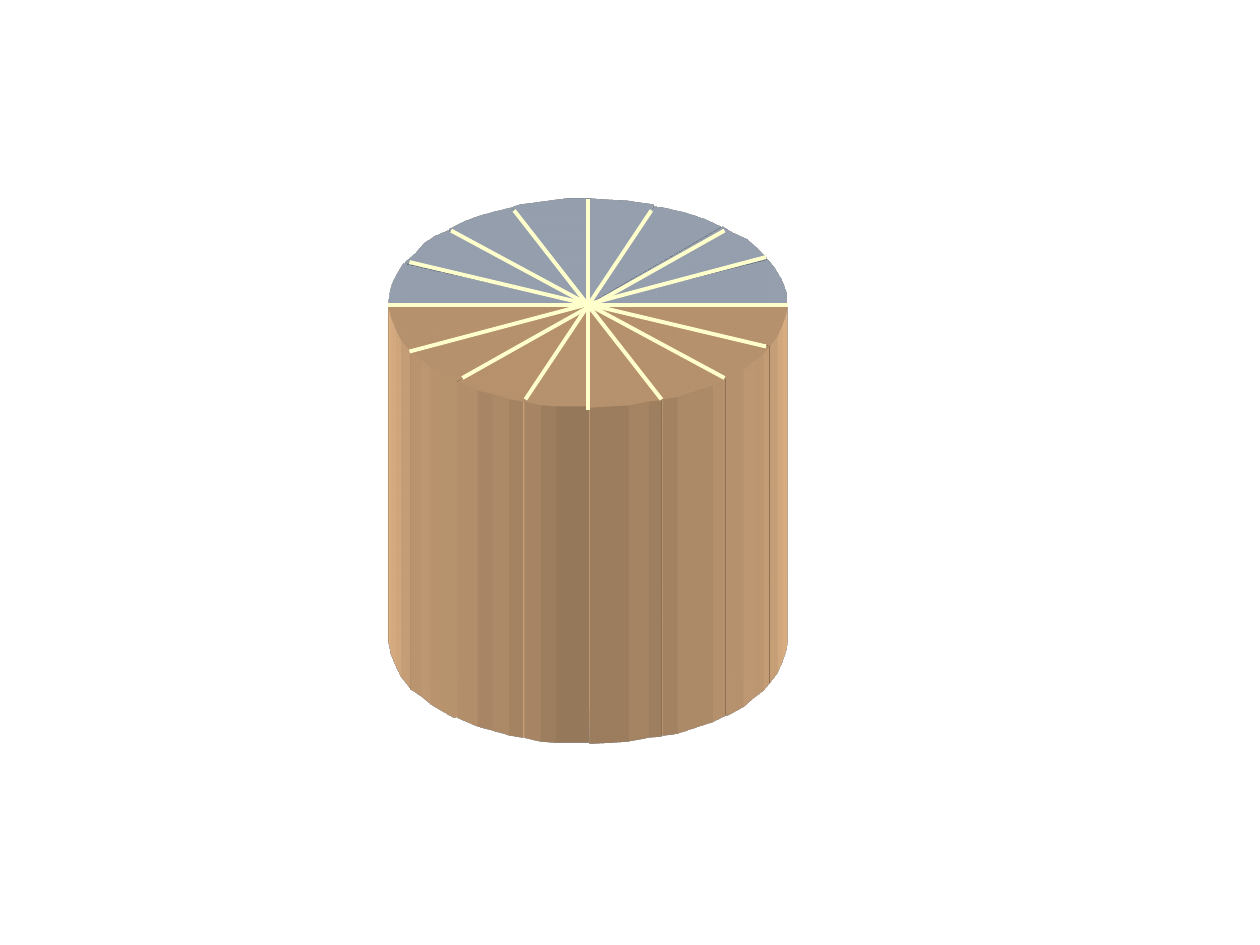
from pptx import Presentation
from pptx.dml.color import RGBColor
from pptx.enum.shapes import MSO_CONNECTOR as Connector
from pptx.oxml import parse_xml
from pptx.oxml.ns import nsdecls
from pptx.util import Inches, Pt
from lxml import etree

COLOURS = {"back": "CFDEF3", "front": "FFCC99", "cut": "FFFFCC"}
CENTRE = (4.67, 2.42)
DEPTH = Inches(5.33)  # the oblique camera shows half of it

# Half of the top and rim points of each slice, from back to front.
SLICES = [
    ("back", [(5.19, 1.63), (4.98, 1.6), (4.83, 1.59), (4.67, 1.58)]),
    ("back", [(4.67, 1.58), (4.5, 1.58), (4.35, 1.6), (4.2, 1.62), (4.13, 1.63), (4.07, 1.65)]),
    ("back", [(4.06, 1.65), (3.94, 1.68), (3.8, 1.72), (3.69, 1.76), (3.57, 1.82)]),
    ("back", [(3.22, 2.08), (3.3, 2.01), (3.37, 1.93), (3.46, 1.87), (3.56, 1.83)]),
    ("back", [(3.2, 2.09), (3.15, 2.17), (3.11, 2.25), (3.09, 2.33), (3.08, 2.42)]),
    ("front", [(3.08, 2.42), (3.1, 2.52), (3.14, 2.62), (3.18, 2.7), (3.26, 2.8)]),
    ("front", [(3.26, 2.8), (3.35, 2.86), (3.42, 2.92), (3.5, 2.97), (3.61, 3.03)]),
    ("front", [(4.15, 3.19), (4.04, 3.17), (3.91, 3.13), (3.79, 3.1), (3.63, 3.03)]),
    ("back", [(5.19, 1.64), (5.26, 1.65), (5.44, 1.69), (5.59, 1.74), (5.72, 1.8)]),
    ("back", [(5.73, 1.8), (5.81, 1.85), (5.92, 1.9), (6, 1.97), (6.08, 2.05)]),
    ("back", [(6.09, 2.06), (6.14, 2.12), (6.2, 2.22), (6.24, 2.33), (6.24, 2.41)]),
    ("front", [(6.25, 2.42), (6.24, 2.49), (6.21, 2.58), (6.17, 2.67), (6.11, 2.75)]),
    ("front", [(6.11, 2.75), (6.06, 2.81), (5.98, 2.87), (5.9, 2.94), (5.77, 3.01)]),
    ("front", [(5.76, 3.01), (5.66, 3.06), (5.53, 3.1), (5.38, 3.15), (5.26, 3.17)]),
    ("front", [(4.68, 3.24), (4.84, 3.23), (4.99, 3.22), (5.15, 3.19), (5.25, 3.18)]),
    ("front", [(4.16, 3.19), (4.29, 3.22), (4.41, 3.23), (4.56, 3.23), (4.67, 3.23)]),
]
CUTS = [
    ((3.08, 2.42), (6.25, 2.42)), ((4.67, 1.58), (4.67, 3.25)),
    ((3.25, 2.08), (6.08, 2.75)), ((3.58, 1.83), (5.75, 3)),
    ((4.08, 1.67), (5.25, 3.17)), ((3.25, 2.79), (6.08, 2.04)),
    ((3.67, 3), (5.75, 1.83)), ((4.17, 3.17), (5.17, 1.67)),
]


class SlidePainter:
    def __init__(self, slide):
        self.shapes = slide.shapes

    def slice(self, rim, colour):
        corners = [(Inches(x), Inches(y)) for x, y in (CENTRE, *rim)]
        builder = self.shapes.build_freeform(*corners[0])
        builder.add_line_segments(corners[1:], close=True)
        shape = builder.convert_to_shape()
        shape.shadow.inherit = False
        shape.fill.solid()
        shape.fill.fore_color.rgb = RGBColor.from_string(COLOURS[colour])
        shape.line.fill.background()
        self.extrude(shape, COLOURS[colour])

    def extrude(self, shape, colour):
        """Give the shape a solid body that runs straight down."""
        properties = shape._element.spPr
        properties.append(parse_xml(
            f'<a:scene3d {nsdecls("a")}><a:camera prst="legacyObliqueBottom"/>'
            '<a:lightRig rig="legacyFlat3" dir="b"/></a:scene3d>'))
        properties.append(parse_xml(
            f'<a:sp3d {nsdecls("a")} extrusionH="{DEPTH}" prstMaterial="legacyMatte">'
            f'<a:extrusionClr><a:srgbClr val="{colour}"/></a:extrusionClr></a:sp3d>'))

    def cut(self, start, end):
        line = self.shapes.add_connector(
            Connector.STRAIGHT, *(Inches(value) for value in (*start, *end)))
        line.line.color.rgb = RGBColor.from_string(COLOURS["cut"])
        line.line.width = Pt(2.25)
        line._element.spPr.append(etree.fromstring(f'<a:effectLst {nsdecls("a")}/>'))


def main():
    deck = Presentation()
    deck.slide_width, deck.slide_height = Inches(10), Inches(7.5)
    painter = SlidePainter(deck.slides.add_slide(deck.slide_layouts[6]))
    for colour, rim in SLICES:
        painter.slice(rim, colour)
    for start, end in CUTS:
        painter.cut(start, end)
    deck.save("out.pptx")


if __name__ == "__main__":
    main()
